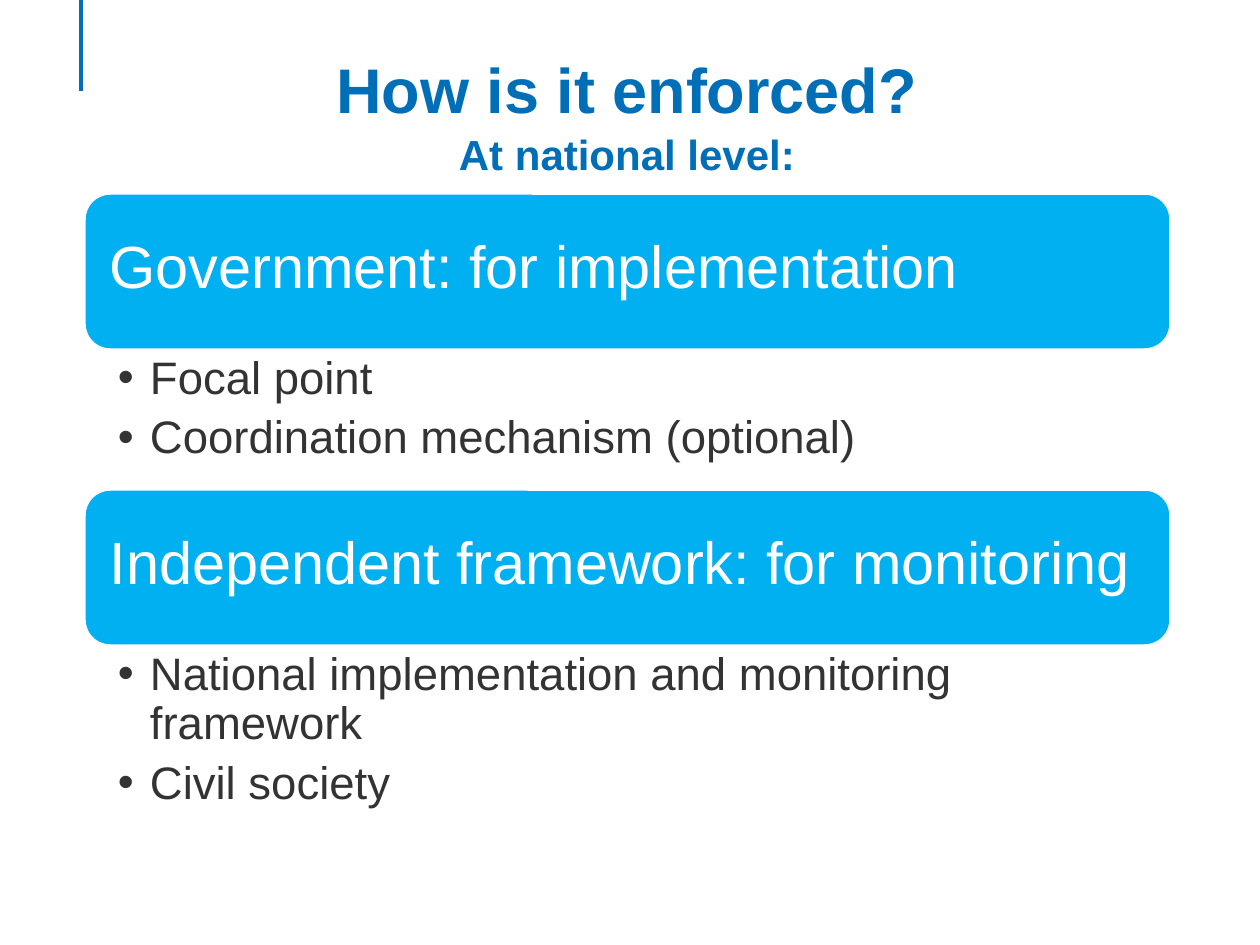
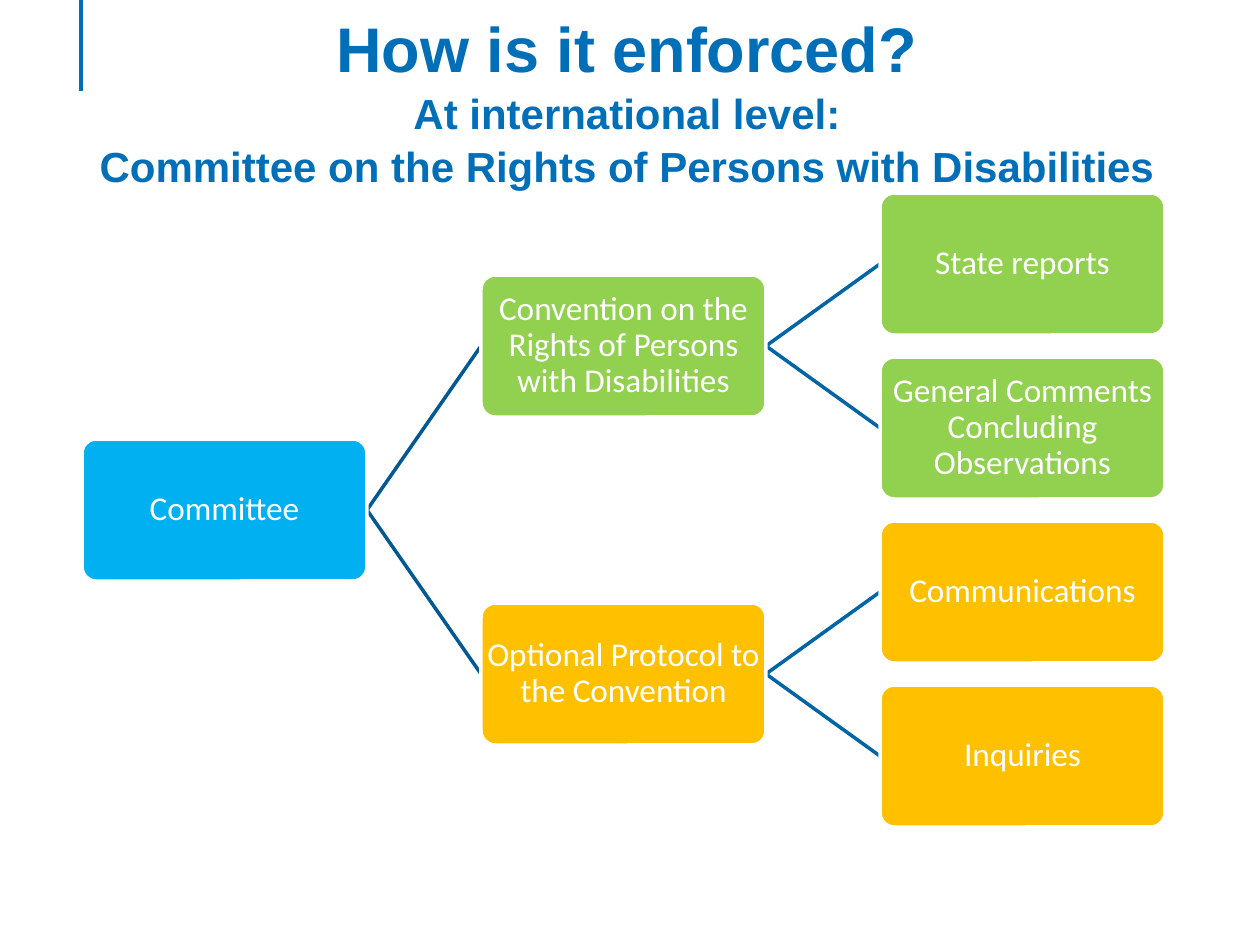
from lxml import etree
from pptx import Presentation
from pptx.dml.color import RGBColor
from pptx.enum.shapes import MSO_CONNECTOR, MSO_SHAPE
from pptx.enum.text import MSO_ANCHOR, MSO_AUTO_SIZE, PP_ALIGN
from pptx.oxml.ns import qn
from pptx.util import Emu, Pt

STRAIGHT = MSO_CONNECTOR.STRAIGHT
ROUNDED = MSO_SHAPE.ROUNDED_RECTANGLE
TOP, MIDDLE = MSO_ANCHOR.TOP, MSO_ANCHOR.MIDDLE
LEFT, CENTER = PP_ALIGN.LEFT, PP_ALIGN.CENTER
NO_FIT = MSO_AUTO_SIZE.NONE

BLUE, SKY, GREEN, AMBER = "006FB7", "00B0F0", "92D050", "FFC000"
WHITE, GREY = "FFFFFF", "333333"
BRANCH_COLOURS = ["005993", "0065A6"]

NATIONAL_TITLE = ["How is it enforced?", "At national level:"]
INTERNATIONAL_TITLE = [
    "How is it enforced?",
    "At international level:",
    "Committee on the Rights of Persons with Disabilities",
]
DUTIES = [
    ("Government: for implementation",
     ["Focal point", "Coordination mechanism (optional)"], 139),
    ("Independent framework: for monitoring",
     ["National implementation and monitoring framework", "Civil society"], 161),
]
COMMITTEE = (["Committee"], SKY, [
    (["Convention on the Rights of Persons with Disabilities"], GREEN, [
        (["State reports"], GREEN, []),
        (["General Comments", "Concluding Observations"], GREEN, []),
    ]),
    (["Optional Protocol to the Convention"], AMBER, [
        (["Communications"], AMBER, []),
        (["Inquiries"], AMBER, []),
    ]),
])

CONTENT_TOP = 193
BANNER_LEFT, BANNER_WIDTH, BANNER_HEIGHT = 84, 1087, 157
NODE_LEFT, NODE_WIDTH, NODE_HEIGHT = 82, 285, 142
COLUMN_STEP, ROW_STEP = 399, 164


def px(value):
    return Emu(round(value * 914400 / 126))


def colour(code):
    return RGBColor.from_string(code)


def write(frame, lines, sizes, font, code, align, anchor, insets, spacing, bold=False):
    frame.word_wrap = True
    frame.auto_size = NO_FIT
    frame.vertical_anchor = anchor
    (frame.margin_left, frame.margin_top,
     frame.margin_right, frame.margin_bottom) = map(px, insets)
    frame.text = "\n".join(lines)
    for para, size in zip(frame.paragraphs, sizes):
        para.alignment = align
        para.line_spacing = spacing
        para.space_before = Pt(0)
        for span in para.runs:
            span.font.size = Pt(size)
            span.font.name = font
            span.font.bold = bold
            span.font.color.rgb = colour(code)


def add_line(page, start, end, code):
    line = page.shapes.add_connector(STRAIGHT, *map(px, start + end))
    line.line.color.rgb = colour(code)
    line.line.width = Pt(2)
    etree.SubElement(line._element.spPr, qn("a:effectLst"))
    return line


def add_page(deck, title_lines, title_top, anchor):
    page = deck.slides.add_slide(deck.slide_layouts[5])
    add_line(page, (81, 0), (81, 91), BLUE)
    title = page.shapes.title
    title.left, title.top, title.width, title.height = map(px, (47, title_top, 1160, 150))
    write(title.text_frame, title_lines, [36, 24, 24], "Arial", BLUE,
          CENTER, anchor, (12, 6, 12, 6), 1.05, bold=True)
    return page


def add_rounded(page, left, top, width, height, fill):
    box = page.shapes.add_shape(ROUNDED, *map(px, (left, top, width, height)))
    box.shadow.inherit = False
    box.fill.solid()
    box.fill.fore_color.rgb = colour(fill)
    box.line.color.rgb = colour(WHITE)
    box.line.width = Pt(2)
    return box


def add_bullets(page, items, top, height):
    box = page.shapes.add_textbox(*map(px, (BANNER_LEFT, top, BANNER_WIDTH, height)))
    write(box.text_frame, items, [26] * len(items), "Arial", GREY,
          LEFT, TOP, (34, 5, 25, 5), 0.9)
    for para in box.text_frame.paragraphs:
        para.space_after = Pt(6)
        properties = para._p.get_or_add_pPr()
        properties.set("marL", str(px(32)))
        properties.set("indent", str(-px(32)))
        etree.SubElement(properties, qn("a:buFont"), typeface="Arial")
        etree.SubElement(properties, qn("a:buChar"), char="•")


def add_duties(page):
    top = CONTENT_TOP
    for heading, items, list_height in DUTIES:
        banner = add_rounded(page, BANNER_LEFT, top, BANNER_WIDTH, BANNER_HEIGHT, SKY)
        write(banner.text_frame, [heading], [34], "Arial", WHITE,
              LEFT, MIDDLE, (18, 10, 18, 14), 0.9)
        top += BANNER_HEIGHT
        add_bullets(page, items, top, list_height)
        top += list_height


def add_branch(page, node, depth=0, first_row=0):
    lines, fill, children = node
    branches, next_row = [], first_row
    for child in children:
        box, row, next_row = add_branch(page, child, depth + 1, next_row)
        branches.append((box, row))
    if branches:
        row = sum(child_row for _, child_row in branches) / len(branches)
    else:
        row, next_row = first_row, first_row + 1
    parent = add_rounded(page, NODE_LEFT + depth * COLUMN_STEP,
                         CONTENT_TOP + row * ROW_STEP, NODE_WIDTH, NODE_HEIGHT, fill)
    parent.adjustments[0] = 0.1
    write(parent.text_frame, lines, [19] * len(lines), "Calibri", WHITE,
          CENTER, MIDDLE, (1, 1, 1, 1), 0.9)
    for box, _ in branches:
        branch = add_line(page, (0, 0), (0, 0), BRANCH_COLOURS[depth])
        branch.begin_connect(parent, 3)
        branch.end_connect(box, 1)
        page.shapes._spTree.insert(2, branch._element)
    return parent, row, next_row


def main():
    deck = Presentation()
    deck.slide_width, deck.slide_height = px(1260), px(945)
    add_duties(add_page(deck, NATIONAL_TITLE, 38, MIDDLE))
    add_branch(add_page(deck, INTERNATIONAL_TITLE, 0, TOP), COMMITTEE)
    deck.save("out.pptx")


if __name__ == "__main__":
    main()
